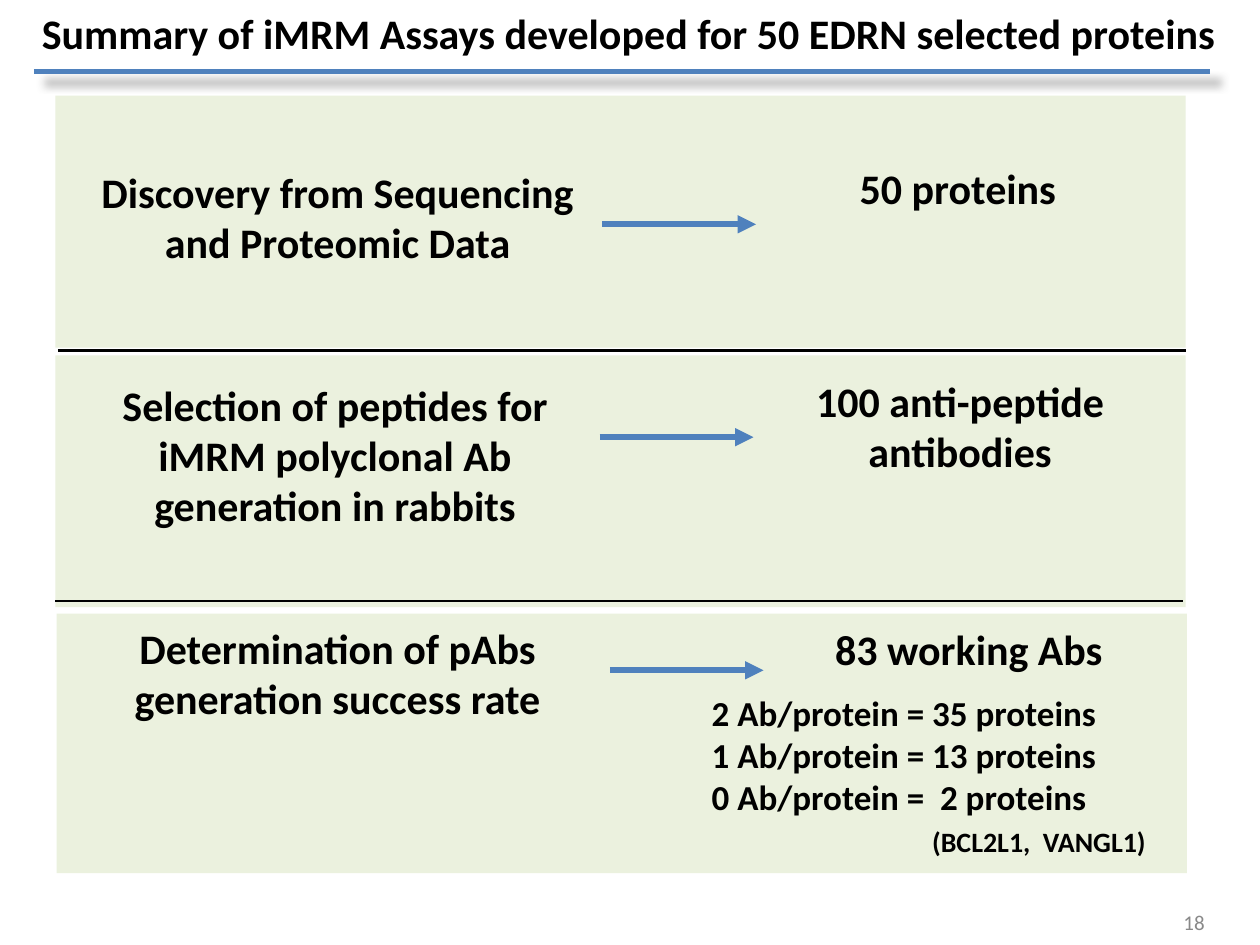
from lxml import etree
from pptx import Presentation
from pptx import util as u
from pptx.dml.color import RGBColor
from pptx.enum import shapes, text
from pptx.oxml.ns import qn

COLORS = {
    "panel": "EBF1DE",
    "accent": "4F81BD",
    "text": "000000",
    "muted": "898989",
    "shadow": "808080",
}
FONT = "Calibri"
ALIGN = text.PP_ALIGN


def color(name):
    return RGBColor.from_string(COLORS[name])


def add_run(paragraph, content, size=24, bold=True, color_name="text"):
    run = paragraph.add_run()
    run.text = content
    run.font.name = FONT
    run.font.size = u.Pt(size)
    run.font.bold = bold
    run.font.color.rgb = color(color_name)


def add_panel(slide, left, top, width, height):
    panel = slide.shapes.add_shape(
        shapes.MSO_SHAPE.RECTANGLE, *map(u.Inches, (left, top, width, height)))
    panel.shadow.inherit = False
    panel.fill.solid()
    panel.fill.fore_color.rgb = color("panel")
    panel.line.fill.background()


def add_textbox(slide, left, top, width, height):
    """Return the text frame of a new wrapping text box."""
    box = slide.shapes.add_textbox(*map(u.Inches, (left, top, width, height)))
    box.text_frame.word_wrap = True
    return box.text_frame


def add_label(slide, content, left, top, width, height=1.03):
    paragraph = add_textbox(slide, left, top, width, height).paragraphs[0]
    paragraph.alignment = ALIGN.CENTER
    add_run(paragraph, content)


def add_line(slide, left, right, y, color_name="text", weight=1.5):
    """Draw a horizontal line; return it with its empty effect list."""
    line = slide.shapes.add_connector(
        shapes.MSO_CONNECTOR.STRAIGHT,
        u.Inches(left), u.Inches(y), u.Inches(right), u.Inches(y))
    line.line.color.rgb = color(color_name)
    line.line.width = u.Pt(weight)
    effects = etree.SubElement(line._element.spPr, qn("a:effectLst"))
    return line, effects


def add_arrow(slide, left, y, length=1.22):
    arrow, _ = add_line(slide, left, left + length, y, "accent", 3.5)
    outline = arrow._element.spPr.find(qn("a:ln"))
    etree.SubElement(outline, qn("a:tailEnd"), type="triangle")


def add_title_rule(slide):
    _, effects = add_line(slide, 0.27, 9.6, 0.57, "accent", 3)
    shadow = etree.SubElement(
        effects, qn("a:outerShdw"), blurRad=str(u.Pt(5)), dist=str(u.Pt(8.5)),
        dir=str(45 * 60000), algn="tl", rotWithShape="0")
    shade = etree.SubElement(shadow, qn("a:srgbClr"), val=COLORS["shadow"])
    etree.SubElement(shade, qn("a:alpha"), val="75000")


def set_title(slide, content):
    title = slide.shapes.title
    title.left, title.top, title.width, title.height = map(
        u.Inches, (0.18, 0.01, 9.62, 0.64))
    frame = title.text_frame
    frame.auto_size = text.MSO_AUTO_SIZE.NONE
    frame.vertical_anchor = text.MSO_ANCHOR.TOP
    frame.paragraphs[0].alignment = ALIGN.CENTER
    add_run(frame.paragraphs[0], content)


def add_antibody_counts(slide):
    frame = add_textbox(slide, 5.55, 5.44, 3.77, 1.03)
    counts = ["2 Ab/protein = 35 proteins",
              "1 Ab/protein = 13 proteins",
              "0 Ab/protein =  2 proteins"]
    for index, count in enumerate(counts):
        paragraph = frame.add_paragraph() if index else frame.paragraphs[0]
        add_run(paragraph, count, 20)
    names = frame.add_paragraph()
    names.space_before = u.Pt(4)
    names._p.get_or_add_pPr().set("marL", str(u.Inches(1.75)))
    add_run(names, "(BCL2L1,  VANGL1)", 16)


def add_slide_number(slide, number):
    frame = add_textbox(slide, 7.33, 7.12, 2.33, 0.4)
    frame.vertical_anchor = text.MSO_ANCHOR.MIDDLE
    frame.paragraphs[0].alignment = ALIGN.RIGHT
    add_run(frame.paragraphs[0], number, 12, False, "muted")


def main():
    presentation = Presentation()
    presentation.slide_width = u.Inches(10)
    presentation.slide_height = u.Inches(7.5)
    slide = presentation.slides.add_slide(presentation.slide_layouts[5])

    for left, top, height in [(0.44, 0.76, 2), (0.44, 2.82, 2), (0.45, 4.87, 2.06)]:
        add_panel(slide, left, top, 8.97, height)
    set_title(slide, "Summary of iMRM Assays developed for 50 EDRN selected proteins")
    add_title_rule(slide)

    # Step and its position, arrow position, result and its position
    steps = [
        ("Discovery from Sequencing and Proteomic Data", 0.58, 1.27,
         4.78, 1.78, "50 proteins ", 5.87, 1.24),
        ("Selection of peptides for iMRM polyclonal Ab generation in rabbits",
         0.56, 2.96, 4.76, 3.47, "100 anti-peptide antibodies", 5.85, 2.93),
        ("Determination of pAbs generation success rate", 0.58, 4.89,
         4.84, 5.32, "83 working Abs", 5.92, 4.9),
    ]
    for step, left, top, arrow_left, arrow_y, result, result_left, result_top in steps:
        add_label(slide, step, left, top, 4.2)
        add_arrow(slide, arrow_left, arrow_y)
        add_label(slide, result, result_left, result_top, 3.54)
    add_antibody_counts(slide)

    for left, y in [(0.46, 2.78), (0.44, 4.77)]:
        add_line(slide, left, left + 8.95, y)
    add_slide_number(slide, "18")
    presentation.save("out.pptx")


if __name__ == "__main__":
    main()
